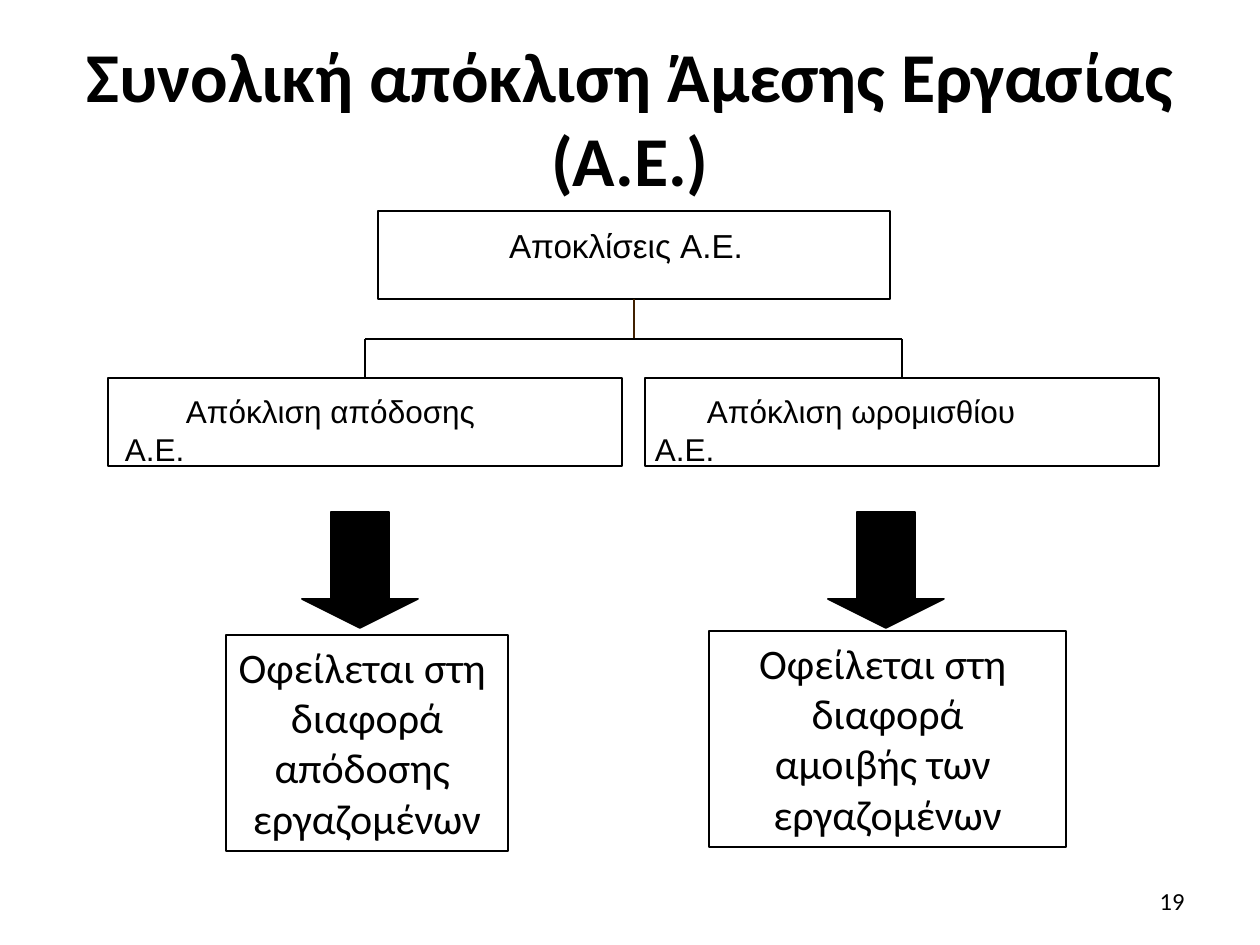
from pptx import Presentation
from pptx.dml.color import RGBColor
from pptx.enum.shapes import MSO_CONNECTOR, MSO_SHAPE
from pptx.enum.text import MSO_ANCHOR, PP_ALIGN
from pptx.oxml.ns import qn
from pptx.util import Pt
from lxml.etree import SubElement

BLACK = RGBColor(0, 0, 0)
BROWN = RGBColor(0x40, 0x20, 0x00)
SCALE = 914400 / 126

TITLE = "Συνολική απόκλιση Άμεσης Εργασίας (Α.Ε.)"
NUMBER = "19"
ROOT = ("Αποκλίσεις A.E.", 378, 211, 512, 131, 0, 19)
KIDS = [
    ("Απόκλιση απόδοσης\vA.E.", 108, 378, 514, 17, 61, 18),
    ("Απόκλιση ωρομισθίου\vA.E.", 645, 378, 514, 10, 52, 18),
]
NOTES = [
    ("Οφείλεται στη \nδιαφορά\nαπόδοσης \nεργαζομένων", 226, 635, 282),
    ("Οφείλεται στη \nδιαφορά\nαμοιβής των \nεργαζομένων", 709, 631, 357),
]
ARROWS = [302, 828]
BOX_H, NOTE_H, ARROW, ARROW_Y, BUS_Y = 88, 216, 116, 512, 339


def px(n):
    return round(n * SCALE)


def write(shape, text, size, font, align, anchor=MSO_ANCHOR.TOP, bold=False):
    frame = shape.text_frame
    frame.word_wrap = True
    frame.vertical_anchor = anchor
    frame.text = text
    for para in frame.paragraphs:
        para.alignment = align
        para.font.size = Pt(size)
        para.font.name = font
        para.font.bold = bold
        para.font.color.rgb = BLACK
    return frame


def label(text, x, y, w, h, size, align, bold=False):
    box = slide.shapes.add_textbox(px(x), px(y), px(w), px(h))
    write(box, text, size, "Calibri", align, MSO_ANCHOR.MIDDLE, bold)


def draw(kind, x, y, w, h, width=1):
    shape = slide.shapes.add_shape(kind, px(x), px(y), px(w), px(h))
    shape.shadow.inherit = False
    shape.fill.background()
    shape.line.color.rgb = BLACK
    shape.line.width = Pt(width)
    return shape


def node(text, x, y, w, inset, indent, size):
    shape = draw(MSO_SHAPE.RECTANGLE, x, y, w, BOX_H, 1.13)
    frame = write(shape, text, size, "Arial", PP_ALIGN.LEFT)
    frame.margin_left, frame.margin_top = px(inset), px(14)
    frame.margin_right = frame.margin_bottom = 0
    props = frame.paragraphs[0]._p.get_or_add_pPr()
    props.set("marL", "0")
    props.set("indent", str(px(indent)))
    return shape


def link(x1, y1, x2, y2, color=BLACK):
    line = slide.shapes.add_connector(
        MSO_CONNECTOR.STRAIGHT, px(x1), px(y1), px(x2), px(y2))
    line.line.color.rgb = color
    line.line.width = Pt(1.13)
    SubElement(line._element.spPr, qn("a:effectLst"))
    return line


deck = Presentation()
deck.slide_width, deck.slide_height = px(1260), px(945)
slide = deck.slides.add_slide(deck.slide_layouts[6])

label(TITLE, 63, 38, 1134, 157, 40, PP_ALIGN.CENTER, True)
label(NUMBER, 903, 876, 294, 50, 14, PP_ALIGN.RIGHT)

root = node(*ROOT)
mid = ROOT[1] + ROOT[3] / 2
trunk = link(mid, ROOT[2] + BOX_H, mid, BUS_Y, BROWN)
trunk.begin_connect(root, 2)
for kid in KIDS:
    box = node(*kid)
    x = kid[1] + kid[3] / 2
    link(mid, BUS_Y, x, BUS_Y)
    link(x, BUS_Y, x, kid[2]).end_connect(box, 0)

for x in ARROWS:
    arrow = draw(MSO_SHAPE.DOWN_ARROW, x, ARROW_Y, ARROW, ARROW)
    arrow.adjustments[0], arrow.adjustments[1] = 0.5, 0.25
    arrow.fill.solid()
    arrow.fill.fore_color.rgb = BLACK

for text, x, y, w in NOTES:
    note = draw(MSO_SHAPE.RECTANGLE, x, y, w, NOTE_H)
    write(note, text, 24, "Calibri", PP_ALIGN.CENTER)

deck.save("out.pptx")
